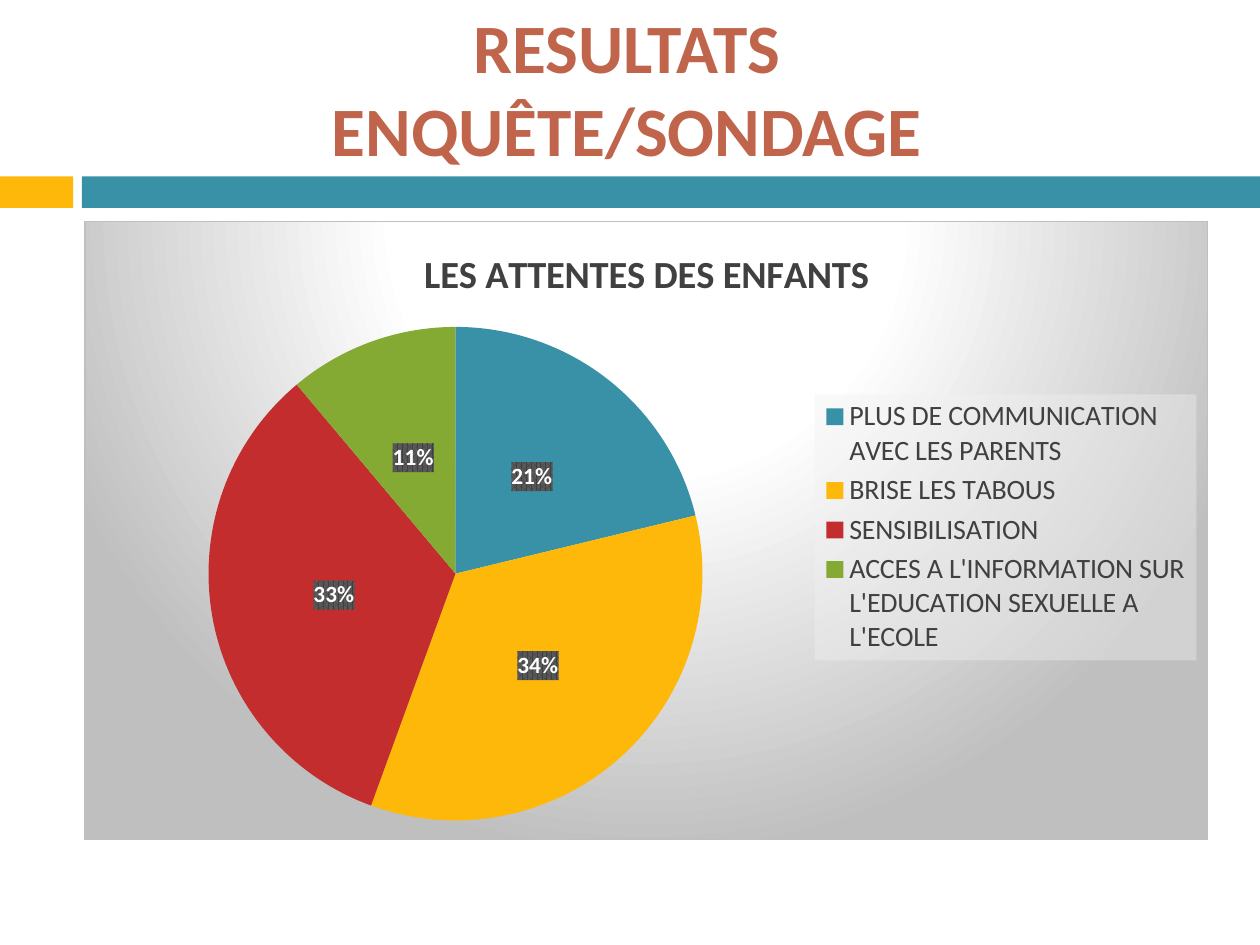
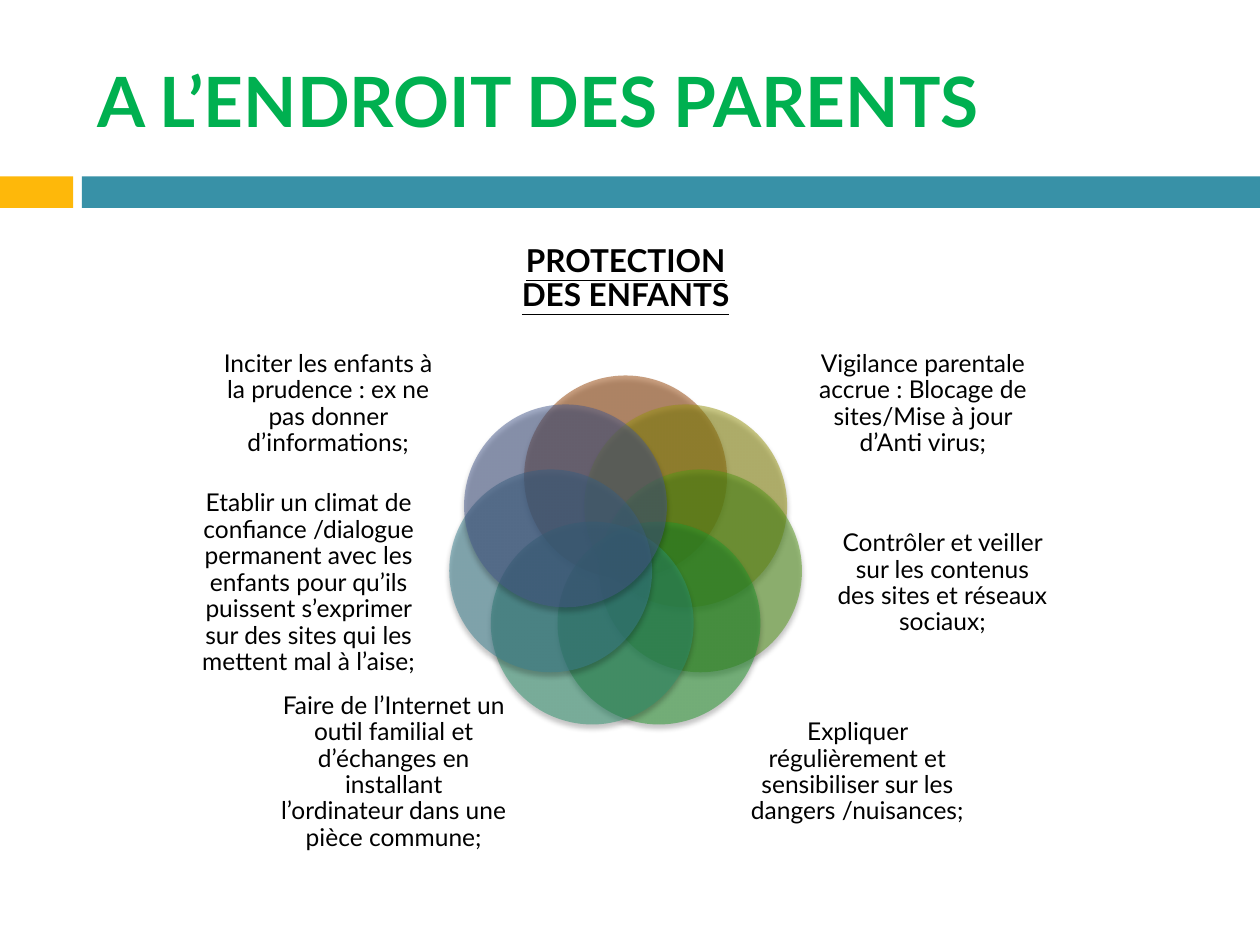
import math
from dataclasses import dataclass
from typing import NamedTuple

import lxml.etree
import pptx
import pptx.chart.data
import pptx.dml.color
import pptx.enum.chart
import pptx.enum.shapes
import pptx.enum.text
import pptx.oxml
import pptx.oxml.ns
import pptx.util

ALIGN = pptx.enum.text.PP_ALIGN
ANCHOR = pptx.enum.text.MSO_ANCHOR
SHAPES = pptx.enum.shapes.MSO_SHAPE
CELL = pptx.util.Inches(0.1)  # the slide is a grid of 100 columns by 75 rows
COLUMNS, ROWS = 100, 75


@dataclass(frozen=True)
class Theme:
    heading_font: str = "Calibri"
    body_font: str = "Lato"
    teal: str = "3891A7"
    amber: str = "FEB80A"
    red: str = "C32D2E"
    green: str = "84AA33"
    brick: str = "C0654C"
    leaf: str = "00B050"
    ink: str = "000000"
    grey: str = "404040"
    silver: str = "BFBFBF"
    white: str = "FFFFFF"
    title_size: float = 39.6
    chart_title_size: float = 22
    heading_size: float = 18
    legend_size: float = 16
    caption_size: float = 14
    label_size: float = 13.3


THEME = Theme()


class Box(NamedTuple):
    """Place on the slide, in columns and rows."""
    left: float
    top: float
    width: float
    height: float

    def emu(self) -> list[int]:
        return [round(length * CELL) for length in self]

    def mirrored(self, axis: float) -> "Box":
        return self._replace(left=2 * axis - self.left - self.width)


class Title(NamedTuple):
    text: str
    box: Box
    font: str
    color: str
    align: ALIGN


class Slice(NamedTuple):
    answer: str
    percent: int
    color: str


class Advice(NamedTuple):
    text: str
    box: Box


# Shared parts
BANDS = ((Box(0, 14, 5.8, 2.5), THEME.amber), (Box(6.5, 14, 93.5, 2.5), THEME.teal))

# Slide 1: survey results
SURVEY_TITLE = Title("RESULTATS\vENQUÊTE/SONDAGE", Box(2.8, 1.5, 93.9, 10.8),
                     THEME.heading_font, THEME.brick, ALIGN.CENTER)
EXPECTATIONS = "LES ATTENTES DES ENFANTS"
EXPECTATIONS_BOX = Box(6.7, 17.5, 89.2, 49.2)
SLICES = (
    Slice("PLUS DE COMMUNICATION AVEC LES PARENTS", 21, THEME.teal),
    Slice("BRISE LES TABOUS", 34, THEME.amber),
    Slice("SENSIBILISATION", 33, THEME.red),
    Slice("ACCES A L'INFORMATION SUR L'EDUCATION SEXUELLE A L'ECOLE", 11, THEME.green),
)
# Shares of the chart area
PIE_AREA = Box(0.11, 0.17, 0.44, 0.8)
LEGEND_AREA = Box(0.65, 0.28, 0.34, 0.43)

# Slide 2: advice for parents
PARENTS_TITLE = Title("A L’ENDROIT DES PARENTS", Box(6.7, 2.5, 89.2, 10.8),
                      THEME.body_font, THEME.leaf, ALIGN.LEFT)
RING_X, RING_Y, RING_RADIUS, PETAL = 49.65, 43.95, 6.1, 16.1
PETAL_COLORS = ("964305", "97940E", "539717", "22962B", "2D946E", "3A8191", "475A8D")
PROTECTION = Advice("PROTECTION DES ENFANTS", Box(40.4, 17.2, 18.5, 9.9))
UPPER = Box(64.5, 26.6, 17.5, 10.9)
MIDDLE = Box(66.2, 40.5, 17.2, 11.6)
LOWER = Box(58.8, 56, 18.5, 10.6)
ADVICE = (
    Advice("Vigilance parentale accrue : Blocage de sites/Mise à jour d’Anti virus;", UPPER),
    Advice("Contrôler et veiller sur les contenus des sites et réseaux sociaux;", MIDDLE),
    Advice("Expliquer régulièrement et sensibiliser sur les dangers /nuisances;", LOWER),
    Advice("Faire de l’Internet un outil familial et d’échanges en installant\v"
           "l’ordinateur dans une pièce commune;", LOWER.mirrored(RING_X)),
    Advice("Etablir un climat de confiance /dialogue permanent avec les enfants pour "
           "qu’ils puissent s’exprimer sur des sites qui les mettent mal à l’aise;",
           MIDDLE.mirrored(RING_X)),
    Advice("Inciter les enfants à la prudence : ex ne pas donner d’informations;",
           UPPER.mirrored(RING_X)),
)


# Helpers
def rgb(color: str) -> pptx.dml.color.RGBColor:
    return pptx.dml.color.RGBColor.from_string(color)


def xml(markup: str) -> lxml.etree._Element:
    """Parse a single-root fragment that uses the a: and c: prefixes."""
    head, tail = markup.split(">", 1)
    slash = "/" if head.endswith("/") else ""
    declared = pptx.oxml.ns.nsdecls("a", "c")
    return pptx.oxml.parse_xml(f"{head.rstrip('/')} {declared}{slash}>{tail}")


def set_font(font, name: str, size: float, color: str, bold: bool = False) -> None:
    font.name, font.size, font.bold = name, pptx.util.Pt(size), bold
    font.color.rgb = rgb(color)


def add_filled(slide, kind: SHAPES, box: Box, color: str):
    shape = slide.shapes.add_shape(kind, *box.emu())
    shape.shadow.inherit = False
    shape.fill.solid()
    shape.fill.fore_color.rgb = rgb(color)
    shape.line.fill.background()
    return shape


def new_slide(deck, title: Title):
    slide = deck.slides.add_slide(deck.slide_layouts[5])
    for box, color in BANDS:
        add_filled(slide, SHAPES.RECTANGLE, box, color)
    holder = slide.shapes.title
    holder.left, holder.top, holder.width, holder.height = title.box.emu()
    frame = holder.text_frame
    frame.text = title.text
    frame.auto_size = pptx.enum.text.MSO_AUTO_SIZE.NONE
    frame.vertical_anchor = ANCHOR.MIDDLE
    paragraph = frame.paragraphs[0]
    paragraph.alignment = title.align
    set_font(paragraph.font, title.font, THEME.title_size, title.color, True)
    return slide


def style_part(part, properties: str) -> None:
    """Give a chart part its fill and line, ahead of its text properties."""
    text_properties = part.find(pptx.oxml.ns.qn("c:txPr"))
    text_properties.addprevious(xml(f"<c:spPr>{properties}</c:spPr>"))


def place_part(part, index: int, area: Box, target: str = "") -> None:
    """Fix a chart part's place as shares of the chart area."""
    for automatic in part.findall(pptx.oxml.ns.qn("c:layout")):
        part.remove(automatic)
    lengths = "".join(f'<c:{tag} val="{share}"/>' for tag, share in zip("xywh", area))
    part.insert(index, xml(
        f'<c:layout><c:manualLayout>{target}<c:xMode val="edge"/><c:yMode val="edge"/>'
        f"{lengths}</c:manualLayout></c:layout>"))


def add_expectations(slide) -> None:
    answers = pptx.chart.data.CategoryChartData()
    answers.categories = [item.answer for item in SLICES]
    answers.add_series(EXPECTATIONS, [item.percent for item in SLICES])
    chart = slide.shapes.add_chart(pptx.enum.chart.XL_CHART_TYPE.PIE,
                                   *EXPECTATIONS_BOX.emu(), answers).chart
    set_font(chart.font, THEME.heading_font, 10, THEME.ink)

    heading = chart.chart_title.text_frame
    heading.text = EXPECTATIONS
    set_font(heading.paragraphs[0].font, THEME.heading_font,
             THEME.chart_title_size, THEME.grey, True)

    chart.has_legend = True
    chart.legend.position = pptx.enum.chart.XL_LEGEND_POSITION.RIGHT
    chart.legend.include_in_layout = False
    set_font(chart.legend.font, THEME.heading_font, THEME.legend_size, THEME.grey)

    pie = chart.plots[0]
    pie.vary_by_categories = True
    for index, item in enumerate(SLICES):
        fill = pie.series[0].points[index].format.fill
        fill.solid()
        fill.fore_color.rgb = rgb(item.color)

    pie.has_data_labels = True
    labels = pie.data_labels
    labels.show_percentage, labels.show_value = True, False
    labels.number_format, labels.number_format_is_linked = "0%", False
    labels.position = pptx.enum.chart.XL_LABEL_POSITION.CENTER
    set_font(labels.font, THEME.heading_font, THEME.label_size, THEME.white, True)

    # Backgrounds and places
    space = chart.element
    legend = space.xpath(".//c:legend")[0]
    stops = "".join(f'<a:gs pos="{share * 1000}"><a:srgbClr val="{color}"/></a:gs>'
                    for share, color in ((0, THEME.white), (39, THEME.white), (100, THEME.silver)))
    style_part(space, f'<a:gradFill><a:gsLst>{stops}</a:gsLst><a:path path="circle">'
               '<a:fillToRect l="50000" t="-80000" r="50000" b="180000"/></a:path></a:gradFill>'
               f'<a:ln w="9525"><a:solidFill><a:srgbClr val="{THEME.silver}"/></a:solidFill></a:ln>')
    style_part(legend, '<a:solidFill><a:srgbClr val="F2F2F2"><a:alpha val="39000"/>'
               "</a:srgbClr></a:solidFill>")
    style_part(space.xpath(".//c:dLbls")[0],
               f'<a:pattFill prst="pct75"><a:fgClr><a:srgbClr val="{THEME.grey}"/></a:fgClr>'
               '<a:bgClr><a:srgbClr val="595959"/></a:bgClr></a:pattFill>')
    place_part(space.xpath(".//c:plotArea")[0], 0, PIE_AREA, '<c:layoutTarget val="inner"/>')
    place_part(legend, 1, LEGEND_AREA)


def add_petal(slide, index: int, color: str) -> None:
    angle = math.tau * index / len(PETAL_COLORS)
    left = RING_X + RING_RADIUS * math.sin(angle) - PETAL / 2
    top = RING_Y - RING_RADIUS * math.cos(angle) - PETAL / 2
    petal = add_filled(slide, SHAPES.OVAL, Box(left, top, PETAL, PETAL), color)
    petal.element.xpath("./p:spPr/a:solidFill/a:srgbClr")[0].append(xml('<a:alpha val="50000"/>'))
    petal.element.xpath("./p:spPr/a:effectLst")[0].append(xml(
        f'<a:outerShdw blurRad="{pptx.util.Pt(3)}" dist="{pptx.util.Pt(2.4)}" dir="5400000" '
        f'rotWithShape="0"><a:srgbClr val="{THEME.ink}"><a:alpha val="45000"/></a:srgbClr>'
        "</a:outerShdw>"))


def add_advice(slide, advice: Advice, size: float, heading: bool = False) -> None:
    frame = slide.shapes.add_textbox(*advice.box.emu()).text_frame
    frame.word_wrap = True
    frame.vertical_anchor = ANCHOR.MIDDLE
    frame.margin_left = frame.margin_right = frame.margin_top = frame.margin_bottom = 0
    frame.text = advice.text
    paragraph = frame.paragraphs[0]
    paragraph.alignment = ALIGN.CENTER
    paragraph.line_spacing = 0.9
    set_font(paragraph.font, THEME.body_font, size, THEME.ink, heading)
    paragraph.font.underline = heading


def main() -> None:
    deck = pptx.Presentation()
    deck.slide_width, deck.slide_height = COLUMNS * CELL, ROWS * CELL

    add_expectations(new_slide(deck, SURVEY_TITLE))

    parents = new_slide(deck, PARENTS_TITLE)
    for index, color in enumerate(PETAL_COLORS):
        add_petal(parents, index, color)
    add_advice(parents, PROTECTION, THEME.heading_size, heading=True)
    for advice in ADVICE:
        add_advice(parents, advice, THEME.caption_size)

    deck.save("out.pptx")


if __name__ == "__main__":
    main()
